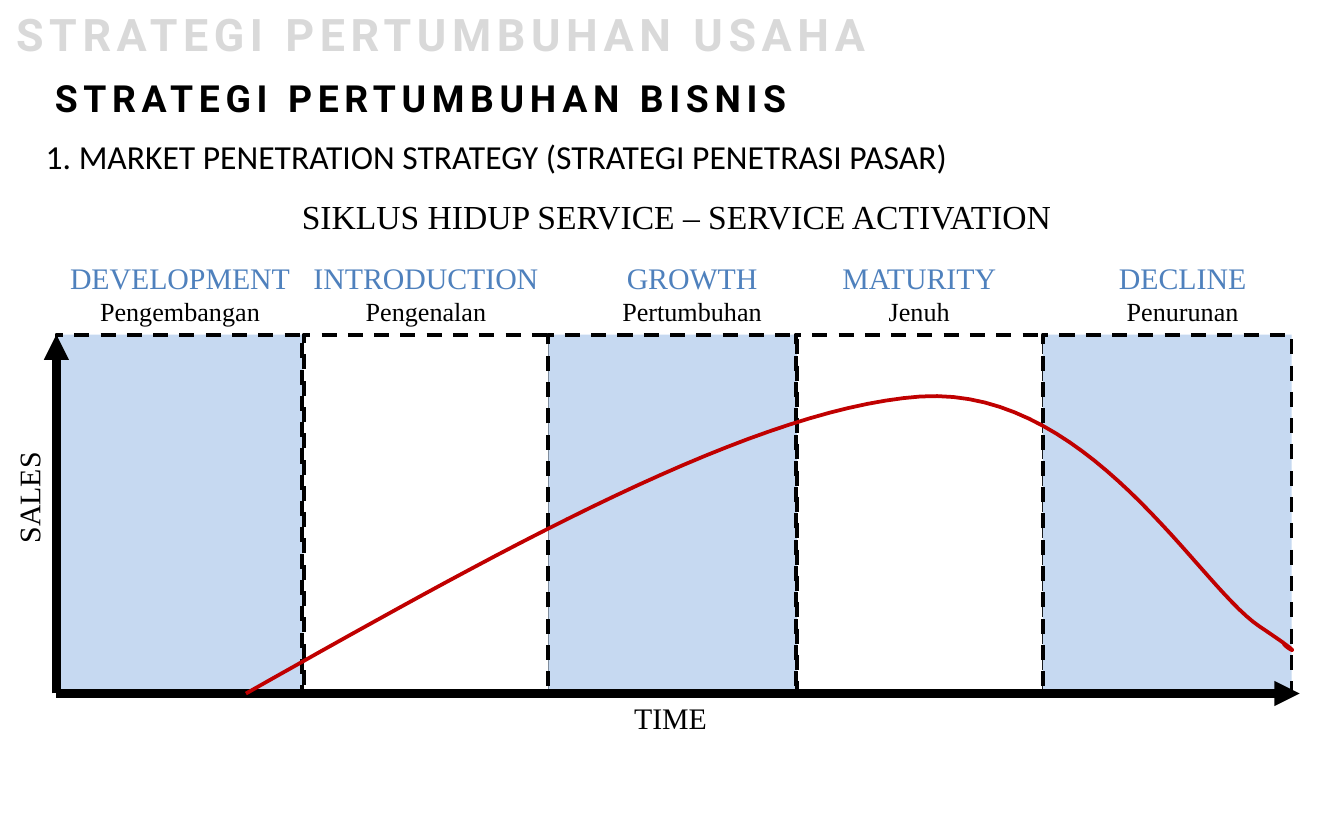
from dataclasses import dataclass

from lxml import etree
from pptx import Presentation, util as u
from pptx.dml.color import RGBColor
from pptx.enum import dml, shapes, text
from pptx.oxml.ns import qn


@dataclass(frozen=True)
class Theme:
    ink: str = "000000"
    pale: str = "D9D9D9"
    blue: str = "4F81BD"
    band: str = "C6D9F1"
    red: str = "C00000"
    head: str = "Roboto"
    body: str = "Calibri"
    serif: str = "Times New Roman"
    title: int = 24
    sub: int = 20
    lead: int = 18
    label: int = 16
    note: int = 14
    thin: float = 2
    thick: float = 4.5


T = Theme()
WIDE, HIGH = u.Inches(10), u.Inches(6.25)
CELL = WIDE / 100  # the slide is a grid of 100 columns by 62.5 rows
LEFT, MID = text.PP_ALIGN.LEFT, text.PP_ALIGN.CENTER

LABEL = 20  # wide enough for the longest stage name on one line
STAGES = [  # name, gloss, left and width in the plot, label centre in the plot
    ("DEVELOPMENT", "Pengembangan", 0, 18.3, 9.2),
    ("INTRODUCTION", "Pengenalan", 18.4, 18.3, 27.5),
    ("GROWTH", "Pertumbuhan", 36.6, 18.5, 47.3),
    ("MATURITY", "Jenuh", 55, 18.5, 64.2),
    ("DECLINE", "Penurunan", 73.4, 18.5, 83.8),
]
START = (18.3, 51.6)
CURVE = [  # two controls and an end for each Bézier piece
    ((37.1, 41), (55.9, 30.4), (68.5, 29.5)),
    ((81, 28.7), (89.1, 43.5), (93.7, 46.6)),
    ((98.2, 49.6), (95, 47.9), (95.6, 47.8)),
]


def grid(*nums):
    return [u.Emu(round(n * CELL)) for n in nums]


def paint(line, color, width):
    line.color.rgb = RGBColor.from_string(color)
    line.width = u.Pt(width)


def write(slide, box, *lines, holder=None, font=T.serif, align=LEFT,
          bold=False, space=0, wrap=False, turn=0):
    """Place lines of (words, size, colour) in a placeholder or a new text box."""
    shape = holder or slide.shapes.add_textbox(*grid(*box))
    shape.left, shape.top, shape.width, shape.height = grid(*box)
    shape.rotation = turn
    frame = shape.text_frame
    frame.word_wrap = wrap
    frame.auto_size = text.MSO_AUTO_SIZE.SHAPE_TO_FIT_TEXT
    frame.vertical_anchor = text.MSO_ANCHOR.TOP
    for i, (words, size, color) in enumerate(lines):
        para = frame.add_paragraph() if i else frame.paragraphs[0]
        para.alignment = align
        if holder:
            props = para._p.get_or_add_pPr()
            props.set("marL", "0")
            props.set("indent", "0")
            para.space_before = u.Pt(0)
            etree.SubElement(props, qn("a:buNone"))
        run = para.add_run()
        run.text = words
        run.font.name, run.font.size, run.font.bold = font, u.Pt(size), bold
        run.font.color.rgb = RGBColor.from_string(color)
        if space:
            run._r.get_or_add_rPr().set("spc", str(space * 100))


def heads(slide):
    title, body = slide.placeholders
    write(slide, (0.2, 0, 100, 5), ("STRATEGI PERTUMBUHAN USAHA", T.title, T.pale),
          holder=title, font=T.head, bold=True, space=3, wrap=True)
    write(slide, (3.1, 5.1, 94.2, 4.4), ("STRATEGI PERTUMBUHAN BISNIS", T.sub, T.ink),
          font=T.head, bold=True, space=3, wrap=True)
    write(slide, (2.4, 9.6, 69.7, 4),
          ("1. MARKET PENETRATION STRATEGY (STRATEGI PENETRASI PASAR)", T.lead, T.ink),
          holder=body, font=T.body)
    write(slide, (21.2, 14.1, 58.3, 4),
          ("SIKLUS HIDUP SERVICE – SERVICE ACTIVATION", T.lead, T.ink), align=MID)


def stages(slide, x, y, w, h):
    """Draw one dashed column for each stage, with its label above."""
    for i, (name, gloss, left, wide, mid) in enumerate(STAGES):
        rect = slide.shapes.add_shape(shapes.MSO_SHAPE.RECTANGLE,
                                      *grid(x + left, y, wide, h))
        rect.shadow.inherit = False
        if i % 2:
            rect.fill.background()
        else:
            rect.fill.solid()
            rect.fill.fore_color.rgb = RGBColor.from_string(T.band)
        paint(rect.line, T.ink, T.thin)
        rect.line.dash_style = dml.MSO_LINE.DASH
        write(slide, (x + mid - LABEL / 2, y - 6.1, LABEL, 6.1),
              (name, T.label, T.blue), (gloss, T.note, T.ink), align=MID)


def arrow(slide, *ends):
    line = slide.shapes.add_connector(shapes.MSO_CONNECTOR.STRAIGHT, *grid(*ends))
    paint(line.line, T.ink, T.thick)
    etree.SubElement(line.line._get_or_add_ln(), qn("a:tailEnd"), type="triangle")
    etree.SubElement(line._element.spPr, qn("a:effectLst"))


def axes(slide, x, y, w, h):
    base = y + h
    arrow(slide, x, base, x + w + 0.6, base)
    arrow(slide, x, base, x, y)
    write(slide, (46.2, base, 7.5, 3.7), ("TIME", T.label, T.ink))
    write(slide, (-2.3, 35.1, 8.9, 3.7), ("SALES", T.label, T.ink), turn=270)


def bezier(a, b, c, d, t):
    s = 1 - t
    return [s**3 * p + 3 * s * s * t * q + 3 * s * t * t * r + t**3 * e
            for p, q, r, e in zip(a, b, c, d)]


def curve(slide, steps=30):
    dots, last = [], START
    for one, two, end in CURVE:
        dots += [grid(*bezier(last, one, two, end, k / steps))
                 for k in range(1, steps + 1)]
        last = end
    path = slide.shapes.build_freeform(*grid(*START))
    path.add_line_segments(dots, close=False)
    shape = path.convert_to_shape()
    shape.shadow.inherit = False
    shape.fill.background()
    paint(shape.line, T.red, T.thin)


def main():
    deck = Presentation()
    deck.slide_width, deck.slide_height = WIDE, HIGH
    slide = deck.slides.add_slide(deck.slide_layouts[1])
    plot = (4.2, 24.9, 91.9, 26.7)
    stages(slide, *plot)
    axes(slide, *plot)
    curve(slide)
    heads(slide)
    deck.save("out.pptx")


if __name__ == "__main__":
    main()
